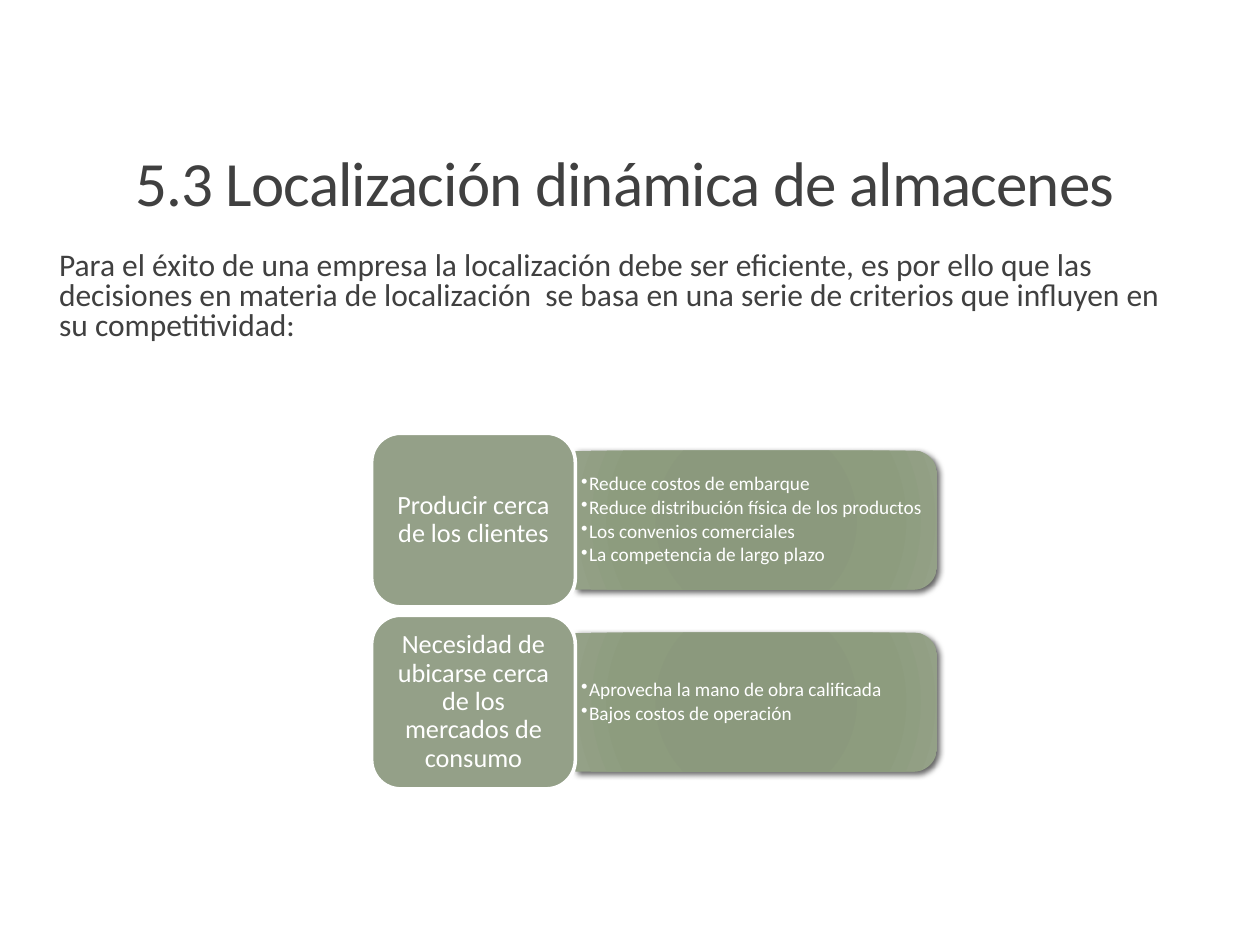
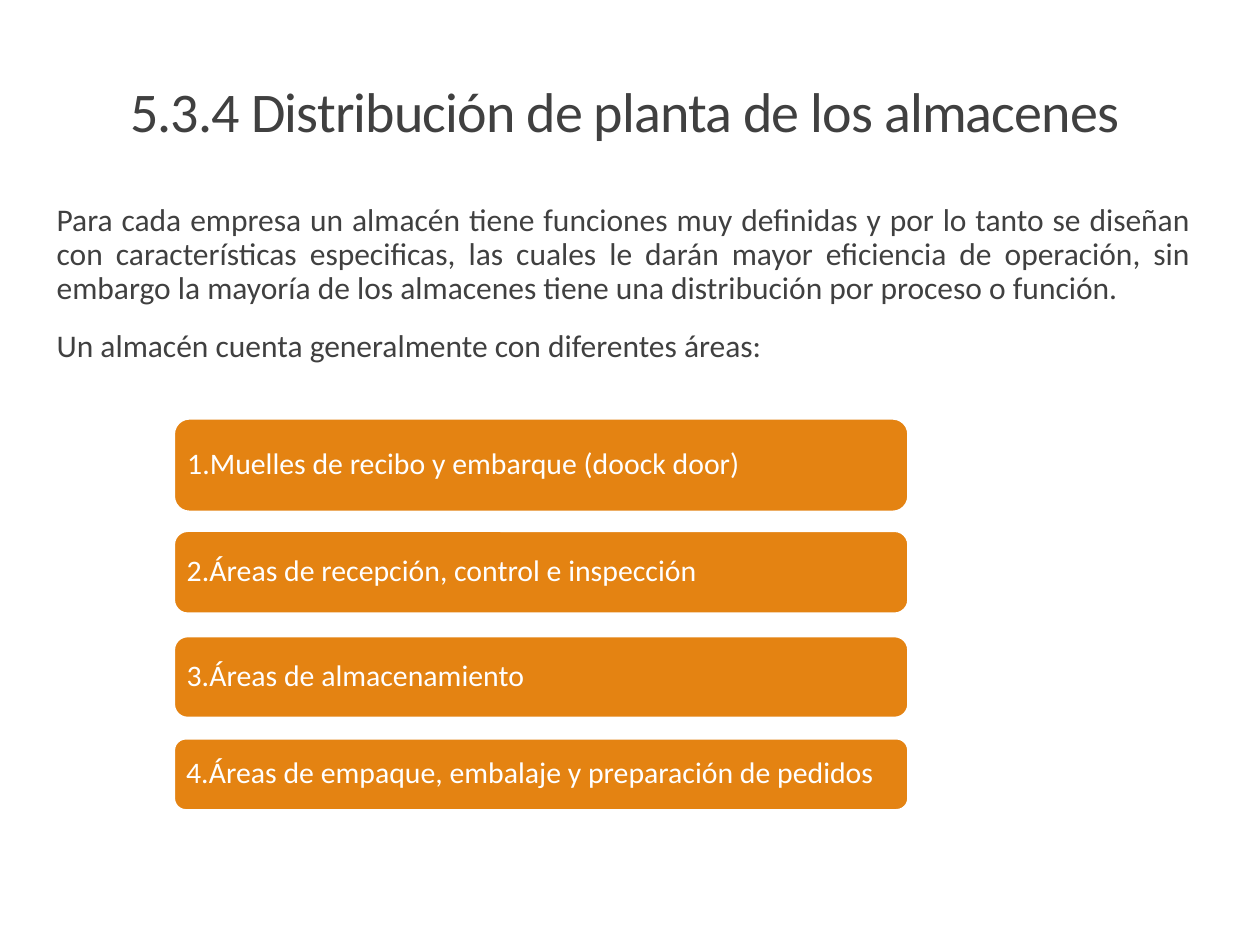
from pptx import Presentation
from pptx.dml.color import RGBColor
from pptx.enum.shapes import MSO_SHAPE as SHAPE
from pptx.enum.text import MSO_ANCHOR as ANCHOR, PP_ALIGN as ALIGN
from pptx.oxml import parse_xml
from pptx.oxml.ns import nsdecls, qn
from pptx.util import Pt

FONT = "Calibri"
INK, WHITE, SAGE, ORANGE = "404040", "FFFFFF", "94A088", "E48312"
PANEL_STOPS = [(0, "8A987B"), (34, "8B997D"), (70, "8D9C7E"), (100, "94A187")]

CRITERIA = [
    ("Producir cerca de los clientes",
     ["Reduce costos de embarque",
      "Reduce distribución física de los productos",
      "Los convenios comerciales",
      "La competencia de largo plazo"]),
    ("Necesidad de ubicarse cerca de los mercados de consumo",
     ["Aprovecha la mano de obra calificada",
      "Bajos costos de operación"]),
]
# Label, top and height of each bar
AREAS = [
    ("1.Muelles de recibo y embarque (doock door)", 239.2, 53.2),
    ("2.Áreas de recepción, control e inspección", 303.4, 47.2),
    ("3.Áreas de almacenamiento", 363.6, 46.6),
    ("4.Áreas de empaque, embalaje y preparación de pedidos", 422, 41),
]


def rgb(color):
    return RGBColor.from_string(color)


class Deck:
    def __init__(self):
        self.prs = Presentation()
        self.prs.slide_width, self.prs.slide_height = Pt(720), Pt(540)
        self.s = None

    def new_slide(self):
        self.s = self.prs.slides.add_slide(self.prs.slide_layouts[6])

    def set_text(self, sp, lines, size, color, align=ALIGN.LEFT, anchor=ANCHOR.MIDDLE,
                 insets=(7.2, 3.6), spacing=0.9, before=0, after=0, bullets=False, track=None):
        """Fill a shape with paragraphs; insets are (sides, top and bottom)."""
        tf = sp.text_frame
        tf.word_wrap = True
        tf.vertical_anchor = anchor
        tf.margin_left = tf.margin_right = Pt(insets[0])
        tf.margin_top = tf.margin_bottom = Pt(insets[1])
        for i, line in enumerate(lines):
            p = tf.add_paragraph() if i else tf.paragraphs[0]
            p.text = line
            p.alignment = align
            p.line_spacing = spacing
            p.space_before = Pt(before if i else 0)
            p.space_after = Pt(after)
            if bullets:
                self.bullet(p)
            r = p.runs[0]
            r.font.name, r.font.size = FONT, Pt(size)
            r.font.color.rgb = rgb(color)
            if track is not None:
                r._r.get_or_add_rPr().set("spc", str(int(track * 100)))

    def bullet(self, p):
        pPr = p._p.get_or_add_pPr()
        pPr.set("marL", str(Pt(4.5)))
        pPr.set("indent", str(-Pt(4.5)))
        pPr.append(parse_xml(f'<a:buChar {nsdecls("a")} char="•"/>'))

    def text(self, x, y, w, h, lines, size, color, **style):
        sp = self.s.shapes.add_textbox(Pt(x), Pt(y), Pt(w), Pt(h))
        self.set_text(sp, lines, size, color, **style)

    def title(self, y, h, text, size):
        self.text(60, y, 594, h, [text], size, INK, align=ALIGN.CENTER,
                  anchor=ANCHOR.BOTTOM, spacing=0.85, track=-0.5)

    def body(self, x, y, h, lines, **style):
        self.text(x, y, 648, h, lines, 18, INK, anchor=ANCHOR.TOP,
                  insets=(0, 3.6), before=12, after=2, **style)

    def box(self, x, y, w, h, text, size, fill, line_width, **style):
        sp = self.s.shapes.add_shape(SHAPE.ROUNDED_RECTANGLE, Pt(x), Pt(y), Pt(w), Pt(h))
        sp.shadow.inherit = False
        sp.fill.solid()
        sp.fill.fore_color.rgb = rgb(fill)
        sp.line.color.rgb = rgb(WHITE)
        sp.line.width = Pt(line_width)
        self.set_text(sp, [text], size, WHITE, **style)

    def panel(self, x, y, w, h):
        """Shaded panel rounded on its right side: a quarter-turned shape."""
        sp = self.s.shapes.add_shape(SHAPE.ROUND_2_SAME_RECTANGLE, Pt(x + (w - h) / 2),
                                     Pt(y + (h - w) / 2), Pt(h), Pt(w))
        sp.rotation = 90
        sp.line.fill.background()
        sp.shadow.inherit = False
        spPr = sp._element.spPr
        stops = "".join(f'<a:gs pos="{pos * 1000}"><a:srgbClr val="{color}"/></a:gs>'
                        for pos, color in PANEL_STOPS)
        spPr.insert(2, parse_xml(
            f'<a:gradFill {nsdecls("a")} rotWithShape="1"><a:gsLst>{stops}</a:gsLst>'
            '<a:path path="circle"><a:fillToRect l="100000" t="100000" r="100000" b="100000"/>'
            '</a:path></a:gradFill>'))
        spPr.find(qn("a:effectLst")).append(parse_xml(
            f'<a:outerShdw {nsdecls("a")} blurRad="{Pt(3.5)}" dist="{Pt(2)}" dir="2700000" '
            'algn="br" rotWithShape="0"><a:srgbClr val="000000"><a:alpha val="60000"/>'
            '</a:srgbClr></a:outerShdw>'))


def location_slide(deck):
    deck.new_slide()
    deck.title(82.8, 46, "5.3 Localización dinámica de almacenes", 36)
    deck.body(33.8, 140.4, 67,
              ["Para el éxito de una empresa la localización debe ser eficiente, es por ello "
               "que las decisiones en materia de localización  se basa en una serie de "
               "criterios que influyen en su competitividad:"], spacing=0.8)
    card_x, card_w, card_h, panel_w, panel_h = 212.4, 116.4, 99.2, 206.6, 79.4
    panel_x = card_x + card_w
    for i, (heading, points) in enumerate(CRITERIA):
        card_y = 247.6 + i * 104
        panel_y = card_y + (card_h - panel_h) / 2
        deck.panel(panel_x, panel_y, panel_w, panel_h)
        deck.text(panel_x, panel_y + 4, panel_w - 4, panel_h - 8, points, 11, WHITE,
                  insets=(3.3, 1.6), after=1.65, bullets=True)
        deck.box(card_x, card_y, card_w, card_h, heading, 15, SAGE, 2,
                 align=ALIGN.CENTER, insets=(4.5, 2.2))


def layout_slide(deck):
    deck.new_slide()
    deck.title(43.2, 42.5, "5.3.4 Distribución de planta de los almacenes", 32)
    deck.body(32.4, 113, 104.4,
              ["Para cada empresa un almacén tiene funciones muy definidas y por lo tanto se "
               "diseñan con características especificas, las cuales le darán mayor eficiencia "
               "de operación, sin embargo la mayoría de los almacenes tiene una distribución "
               "por proceso o función.",
               "Un almacén cuenta generalmente con diferentes áreas:"], align=ALIGN.JUSTIFY)
    for label, y, h in AREAS:
        deck.box(99.4, y, 419.6, h, label, 17, ORANGE, 1.25, insets=(5, 5))


def main():
    deck = Deck()
    location_slide(deck)
    layout_slide(deck)
    deck.prs.save("out.pptx")


if __name__ == "__main__":
    main()
